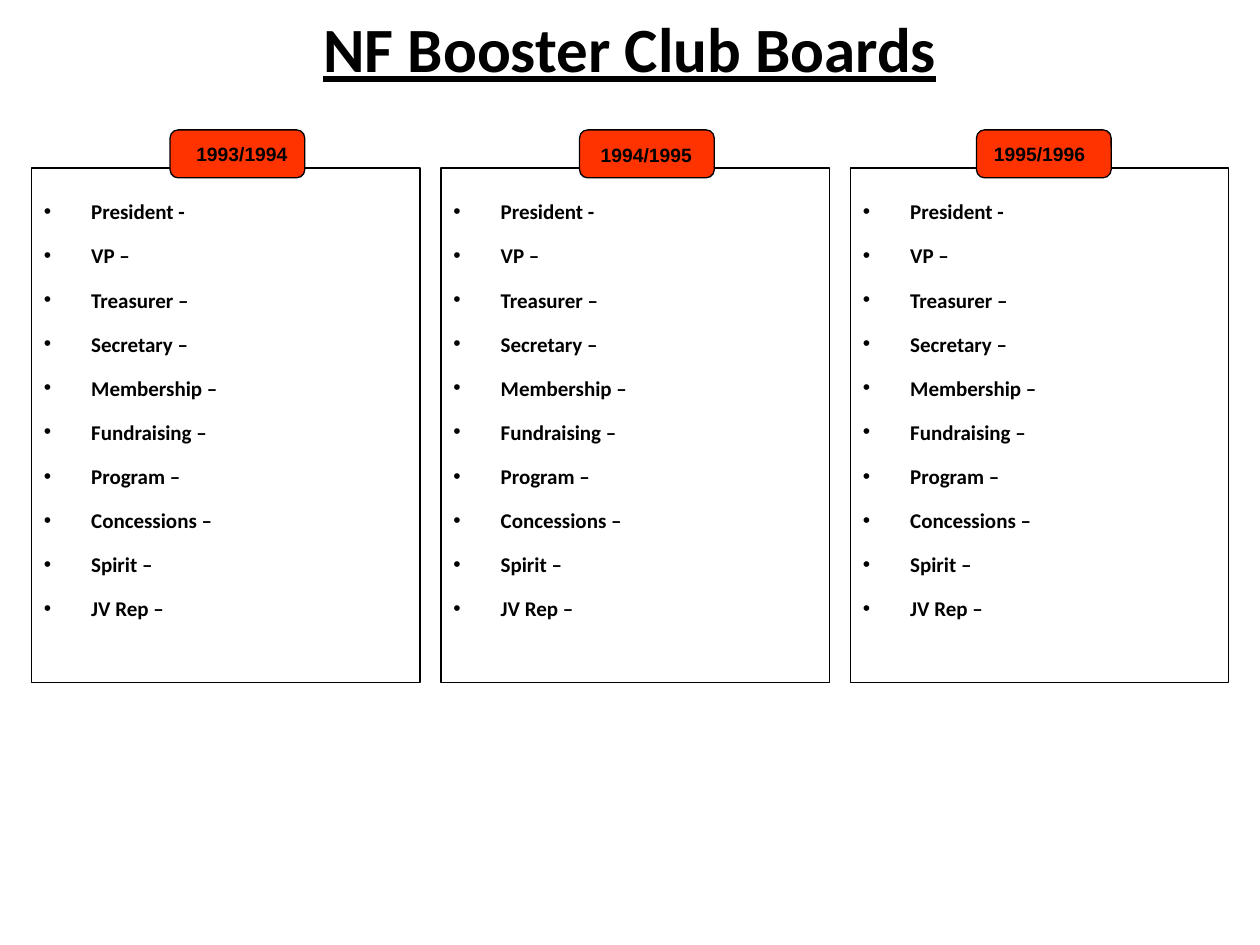
from dataclasses import dataclass

from lxml import etree
from pptx import Presentation
from pptx import util as u
from pptx.dml.color import RGBColor
from pptx.enum import shapes, text
from pptx.oxml import ns

BLACK = RGBColor(0x00, 0x00, 0x00)
ORANGE = RGBColor(0xFF, 0x33, 0x00)

PANEL_TOP, PANEL_HEIGHT = 96, 294
PANEL_LEFT, PANEL_STEP = 18, 234
TAB_TOP, TAB_WIDTH, TAB_HEIGHT = 74.2, 77, 27.4
LIST_WIDTH, LIST_HEIGHT = 336, 438
LIST_INDENT = 27

ROLES = [
    "President -", "VP –", "Treasurer –", "Secretary –", "Membership –",
    "Fundraising –", "Program –", "Concessions –", "Spirit –", "JV Rep –",
]


@dataclass(frozen=True)
class Board:
    years: str
    panel_width: float
    tab_left: float
    label_left: float
    label_top: float


BOARDS = [
    Board("1993/1994", 222, 97.2, 105.1, 78),
    Board("1994/1995", 222, 331.2, 336.2, 78.5),
    Board("1995/1996", 216, 558, 560.9, 78),
]


def add_box(slide, kind, left: float, top: float, width: float, height: float,
            fill: RGBColor | None = None):
    shape = slide.shapes.add_shape(
        kind, u.Pt(left), u.Pt(top), u.Pt(width), u.Pt(height))
    shape.shadow.inherit = False
    if fill is None:
        shape.fill.background()
    else:
        shape.fill.solid()
        shape.fill.fore_color.rgb = fill
    shape.line.color.rgb = BLACK
    shape.line.width = u.Pt(0.75)
    return shape


def add_text_frame(slide, left: float, top: float, width: float, height: float):
    shape = slide.shapes.add_textbox(
        u.Pt(left), u.Pt(top), u.Pt(width), u.Pt(height))
    shape.text_frame.word_wrap = True
    return shape.text_frame


def add_run(paragraph, wording: str, size: float, font_name: str):
    run = paragraph.add_run()
    run.text = wording
    run.font.size = u.Pt(size)
    run.font.name = font_name
    run.font.bold = True
    run.font.color.rgb = BLACK
    return run


def add_bullet(paragraph) -> None:
    properties = paragraph._p.get_or_add_pPr()
    properties.set("marL", str(u.Pt(LIST_INDENT)))
    properties.set("indent", str(-u.Pt(LIST_INDENT)))
    font = etree.SubElement(properties, ns.qn("a:buFont"))
    font.set("typeface", "Arial")
    bullet = etree.SubElement(properties, ns.qn("a:buChar"))
    bullet.set("char", "•")


def add_title(slide) -> None:
    frame = add_text_frame(slide, 36, -18, 648, 90)
    frame.vertical_anchor = text.MSO_ANCHOR.MIDDLE
    paragraph = frame.paragraphs[0]
    paragraph.alignment = text.PP_ALIGN.CENTER
    run = add_run(paragraph, "NF Booster Club Boards", 36, "Calibri")
    run.font.underline = True


def add_roles(slide, left: float) -> None:
    frame = add_text_frame(slide, left, PANEL_TOP, LIST_WIDTH, LIST_HEIGHT)
    frame.margin_top = u.Pt(20.4)
    for index, role in enumerate(ROLES):
        paragraph = frame.add_paragraph() if index else frame.paragraphs[0]
        paragraph.line_spacing = 0.8
        paragraph.space_after = u.Pt(13.7)
        add_bullet(paragraph)
        add_run(paragraph, role, 12, "Calibri")


def add_board(slide, board: Board, left: float) -> None:
    # Panel with its year tab
    add_box(slide, shapes.MSO_SHAPE.RECTANGLE, left, PANEL_TOP,
            board.panel_width, PANEL_HEIGHT)
    tab = add_box(slide, shapes.MSO_SHAPE.ROUNDED_RECTANGLE, board.tab_left,
                  TAB_TOP, TAB_WIDTH, TAB_HEIGHT, ORANGE)
    tab.adjustments[0] = 0.17

    # Year label and list of roles
    label = add_text_frame(slide, board.label_left, board.label_top, 69, 21)
    add_run(label.paragraphs[0], board.years, 11, "Arial")
    add_roles(slide, left)


def main() -> None:
    presentation = Presentation()
    presentation.slide_width = u.Pt(720)
    presentation.slide_height = u.Pt(540)
    slide = presentation.slides.add_slide(presentation.slide_layouts[6])

    add_title(slide)
    for index, board in enumerate(BOARDS):
        add_board(slide, board, PANEL_LEFT + index * PANEL_STEP)

    presentation.save("out.pptx")


if __name__ == "__main__":
    main()
